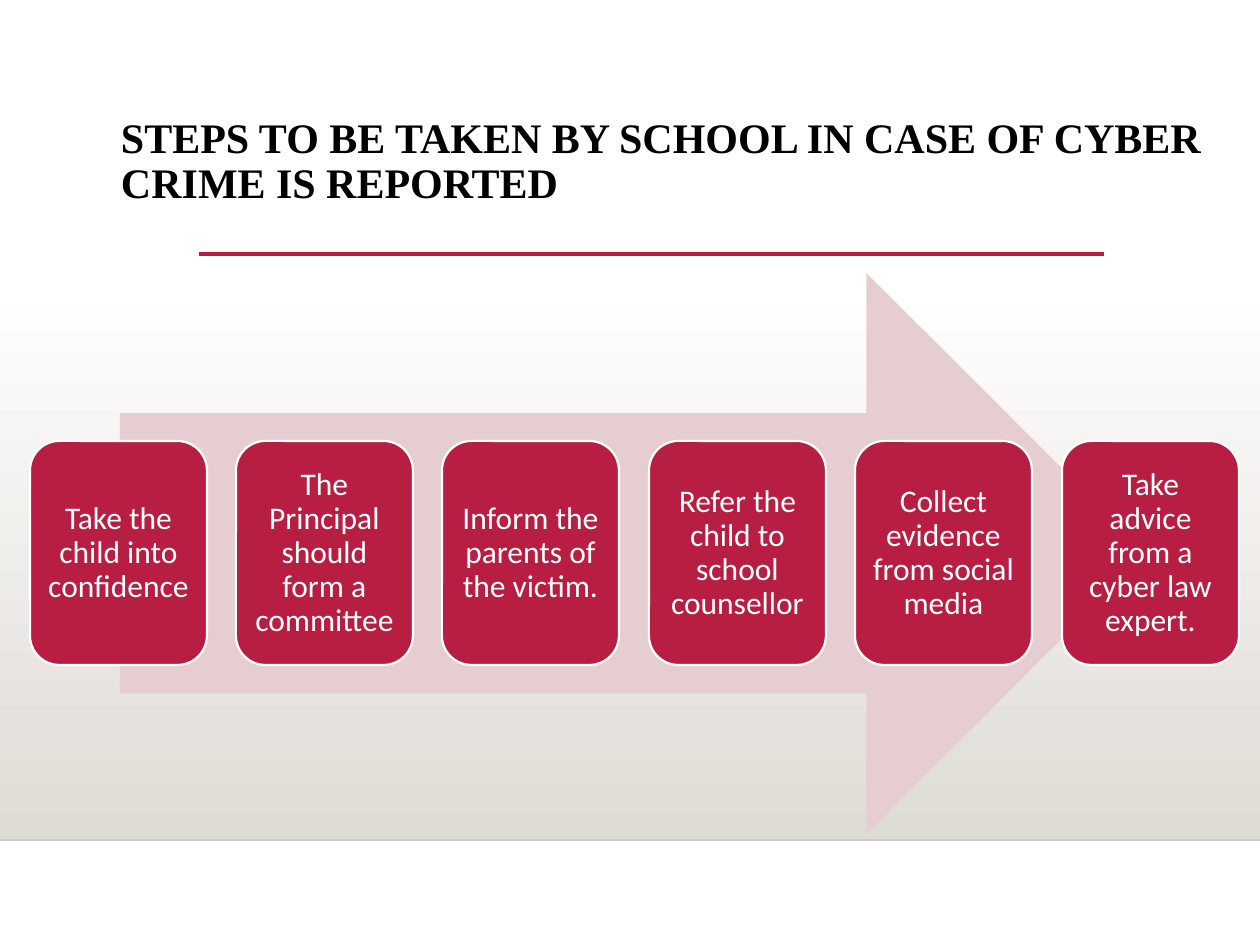
"""Build the slide on the steps a school takes when a cyber crime is reported."""
from lxml.etree import SubElement
from pptx import Presentation
from pptx.dml.color import RGBColor
from pptx.enum.shapes import MSO_CONNECTOR, MSO_SHAPE
from pptx.enum.text import MSO_ANCHOR, MSO_AUTO_SIZE, PP_ALIGN
from pptx.oxml.ns import qn
from pptx.util import Emu, Pt

CRIMSON = "B71E42"
STEPS = [
    "Take the child into confidence",
    "The Principal should form a committee",
    "Inform the parents of the victim.",
    "Refer the child to school counsellor",
    "Collect evidence from social media",
    "Take advice from a cyber law expert.",
]


def px(length):
    return Emu(round(length * 914400 / 126))


def color(value):
    return RGBColor.from_string(value)


presentation = Presentation()
presentation.slide_width = px(1260)
presentation.slide_height = px(945)
slide = presentation.slides.add_slide(presentation.slide_layouts[5])
shapes = slide.shapes

floor = shapes.add_shape(MSO_SHAPE.RECTANGLE, px(0), px(277), px(1260), px(563))
floor.shadow.inherit = False
floor.line.fill.background()
floor.fill.gradient()
floor.fill.gradient_angle = 270
for stop, value in zip(floor.fill.gradient_stops, ["FFFFFF", "DFDBD5"]):
    stop.color.rgb = color(value)

for left, right, top, value, width in [
    (0, 1260, 840, "CCCCCC", 1),
    (199, 1104, 254, CRIMSON, 2.5),
]:
    rule = shapes.add_connector(MSO_CONNECTOR.STRAIGHT, px(left), px(top), px(right), px(top))
    rule.line.color.rgb = color(value)
    rule.line.width = Pt(width)
    SubElement(rule._element.spPr, qn("a:effectLst"))

title = shapes.title
title.left, title.top, title.width, title.height = px(108), px(111), px(1106), px(131)
frame = title.text_frame
frame.word_wrap = True
frame.auto_size = MSO_AUTO_SIZE.NONE
frame.vertical_anchor = MSO_ANCHOR.TOP
frame.margin_left, frame.margin_right = px(13), px(8)
paragraph = frame.paragraphs[0]
paragraph.alignment = PP_ALIGN.LEFT
paragraph.line_spacing = 0.9
run = paragraph.add_run()
run.text = "STEPS TO BE TAKEN BY SCHOOL IN CASE OF CYBER CRIME IS REPORTED"
run.font.name = "Times New Roman"
run.font.size = Pt(24)
run.font.bold = True
run.font.color.rgb = color("000000")

arrow = shapes.add_shape(MSO_SHAPE.RIGHT_ARROW, px(120), px(273), px(1027), px(561))
arrow.shadow.inherit = False
arrow.fill.solid()
arrow.fill.fore_color.rgb = color("E6CDCF")
arrow.line.fill.background()

for index, text in enumerate(STEPS):
    left = 30 + 1032 * index // 5
    step = shapes.add_shape(MSO_SHAPE.ROUNDED_RECTANGLE, px(left), px(441), px(177), px(224))
    step.shadow.inherit = False
    step.fill.solid()
    step.fill.fore_color.rgb = color(CRIMSON)
    step.line.color.rgb = color("FFFFFF")
    step.line.width = Pt(1.25)
    frame = step.text_frame
    frame.word_wrap = True
    frame.vertical_anchor = MSO_ANCHOR.MIDDLE
    frame.margin_left = frame.margin_right = px(8)
    frame.margin_top = frame.margin_bottom = px(8)
    paragraph = frame.paragraphs[0]
    paragraph.alignment = PP_ALIGN.CENTER
    paragraph.line_spacing = 0.9
    run = paragraph.add_run()
    run.text = text
    run.font.name = "Calibri"
    run.font.size = Pt(18)
    run.font.color.rgb = color("FFFFFF")

presentation.save("out.pptx")
